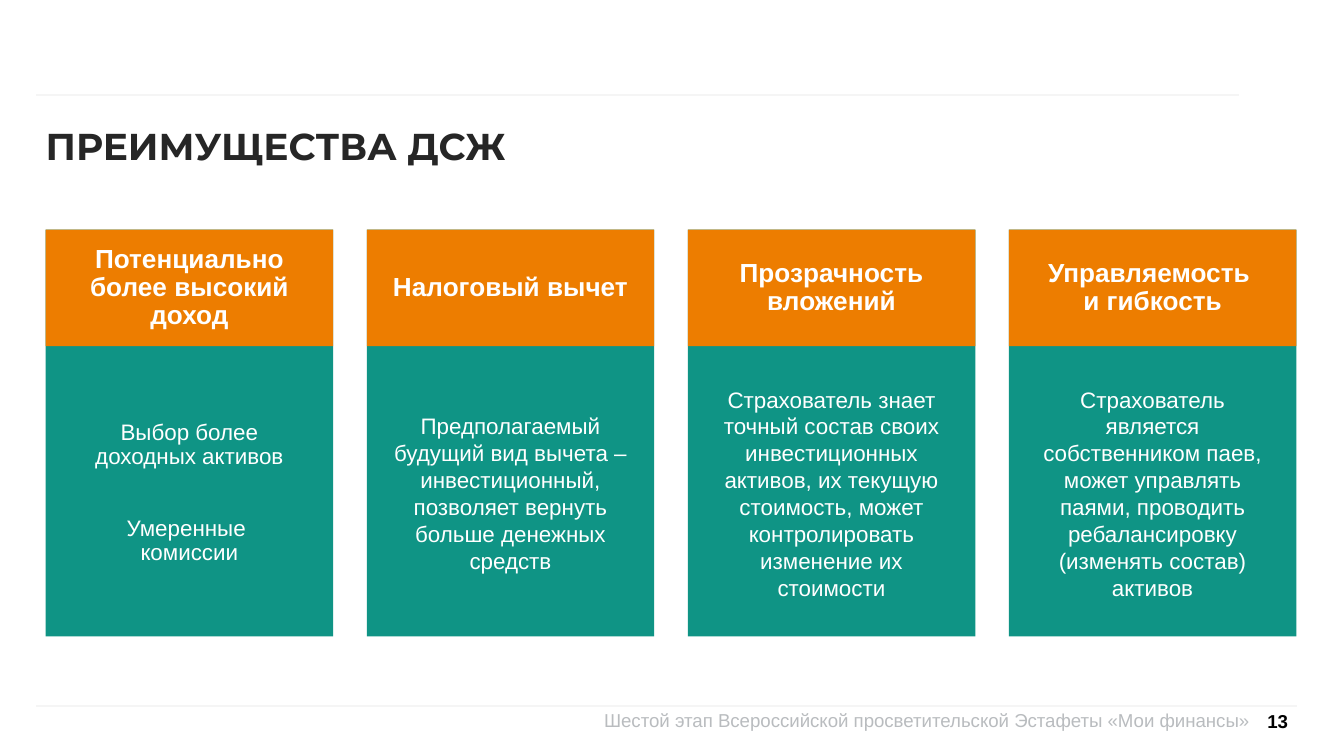
"""Build the slide on the four advantages of share-based life insurance."""
from lxml.etree import SubElement
from pptx import Presentation
from pptx.dml.color import RGBColor
from pptx.enum.shapes import MSO_CONNECTOR, MSO_SHAPE
from pptx.enum.text import MSO_ANCHOR, MSO_AUTO_SIZE, PP_ALIGN
from pptx.oxml.ns import qn
from pptx.util import Pt

CARDS = [
    ("Потенциально более высокий доход",
     ["Выбор более доходных активов", "Умеренные \nкомиссии"], 0.9),
    ("Налоговый вычет",
     ["Предполагаемый будущий вид вычета – инвестиционный, "
      "позволяет вернуть больше денежных средств"], 1.0),
    ("Прозрачность вложений",
     ["Страхователь знает точный состав своих инвестиционных активов, их текущую "
      "стоимость, может контролировать изменение их стоимости"], 1.0),
    ("Управляемость \nи гибкость",
     ["Страхователь является собственником паев, может управлять паями, "
      "проводить ребалансировку (изменять состав) активов"], 1.0),
]
LEFT, TOP, WIDE, TALL, STEP, HEAD = 24.5, 123, 154, 218, 172, 62.5


def tint(code):
    return RGBColor.from_string(code)


def write(frame, texts, size=12, color="FFFFFF", bold=False, face="Arial",
          align=PP_ALIGN.CENTER, anchor=MSO_ANCHOR.MIDDLE, line=1.0, gap=0):
    frame.word_wrap = True
    frame.auto_size = MSO_AUTO_SIZE.NONE
    frame.vertical_anchor = anchor
    frame.margin_left = frame.margin_right = 0
    frame.margin_top = frame.margin_bottom = 0
    for i, text in enumerate(texts):
        para = frame.add_paragraph() if i else frame.paragraphs[0]
        para.text = text
        para.alignment = align
        para.line_spacing = line
        if i:
            para.space_before = Pt(gap)
        for run in para.runs:
            font = run.font
            font.name, font.size, font.bold = face, Pt(size), bold
            font.color.rgb = tint(color)
        for brk in para._p.findall(qn("a:br")):
            SubElement(brk, qn("a:rPr"), sz=str(size * 100))


class Deck:
    """Hold the palette and the current slide."""
    teal, amber, rule, ink, grey = "0F9485", "ED7D00", "F5F5F5", "262626", "B9BCBF"

    def __init__(self, slide):
        self.slide = slide
        self.shapes = slide.shapes

    def title(self, text, x, y, w, h):
        shape = self.shapes.title
        shape.left, shape.top, shape.width, shape.height = map(Pt, (x, y, w, h))
        write(shape.text_frame, [text], size=20, color=self.ink, bold=True,
              face="Montserrat", align=PP_ALIGN.LEFT, anchor=MSO_ANCHOR.TOP, line=0.9)

    def text(self, texts, x, y, w, h, **form):
        box = self.shapes.add_textbox(*map(Pt, (x, y, w, h)))
        write(box.text_frame, texts, **form)

    def rect(self, x, y, w, h, color):
        shape = self.shapes.add_shape(MSO_SHAPE.RECTANGLE, *map(Pt, (x, y, w, h)))
        shape.shadow.inherit = False
        shape.fill.solid()
        shape.fill.fore_color.rgb = tint(color)
        shape.line.fill.background()

    def line(self, x, y, end):
        link = self.shapes.add_connector(MSO_CONNECTOR.STRAIGHT, *map(Pt, (x, y, end, y)))
        link.line.color.rgb = tint(self.rule)
        link.line.width = Pt(1)
        SubElement(link._element.spPr, qn("a:effectLst"))

    def card(self, x, head, body, line):
        self.rect(x, TOP, WIDE, TALL, self.teal)
        self.rect(x, TOP, WIDE, HEAD, self.amber)
        self.text([head], x + 9, TOP + 0.5, WIDE - 18, HEAD - 1,
                  size=14, bold=True, line=0.9)
        self.text(body, x + 13, TOP + HEAD, WIDE - 26, TALL - HEAD + 2,
                  line=line, gap=25.5)


def main():
    prs = Presentation()
    prs.slide_width, prs.slide_height = Pt(720), Pt(405)
    deck = Deck(prs.slides.add_slide(prs.slide_layouts[5]))
    deck.line(19.5, 51, 664)
    deck.line(19.5, 378, 695)
    deck.title("ПРЕИМУЩЕСТВА ДСЖ", LEFT, 68.5, 487, 40)
    for i, card in enumerate(CARDS):
        deck.card(LEFT + i * STEP, *card)
    deck.text(["Шестой этап Всероссийской просветительской Эстафеты «Мои финансы»"],
              258, 380, 411, 25, size=10, color=deck.grey,
              align=PP_ALIGN.RIGHT, anchor=MSO_ANCHOR.TOP)
    deck.text(["13"], 670, 376.5, 20, 20, size=10, color="000000", bold=True,
              align=PP_ALIGN.RIGHT)
    prs.save("out.pptx")


if __name__ == "__main__":
    main()
